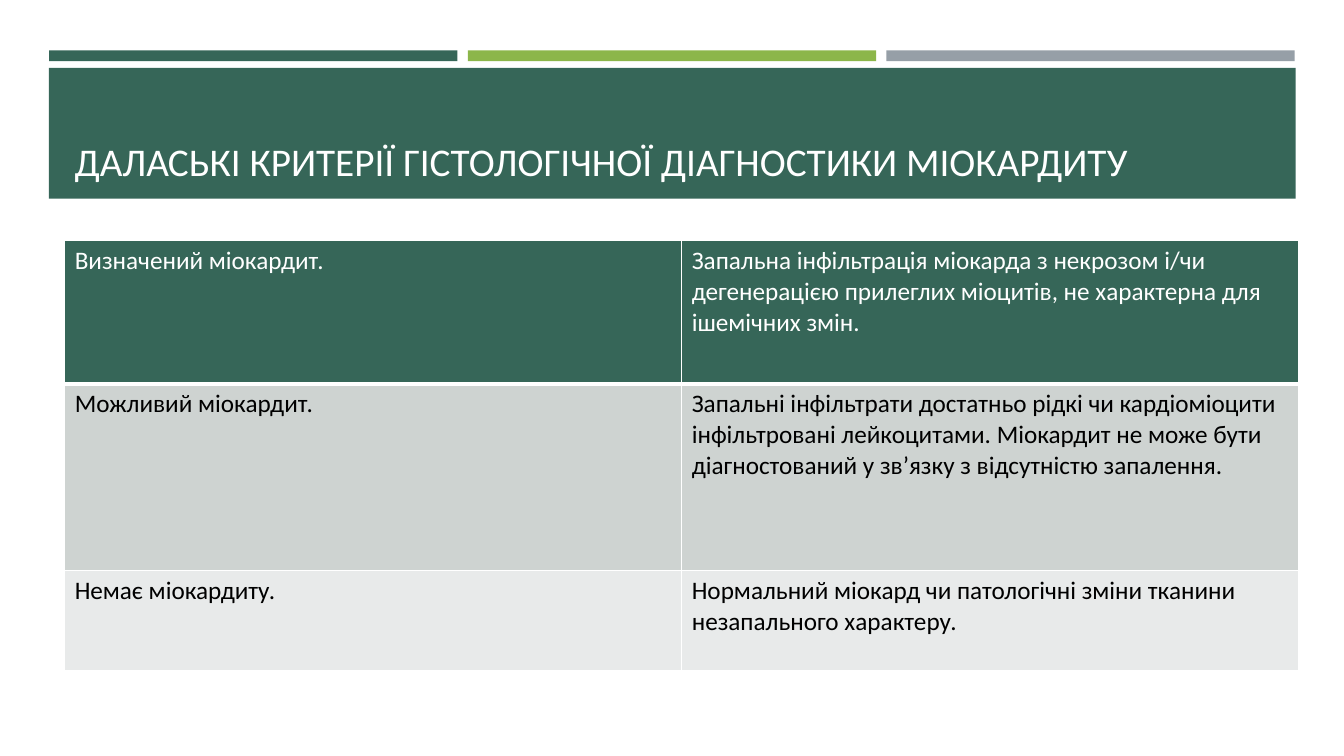
from lxml import etree
from pptx import Presentation
from pptx import util as u
from pptx.dml.color import RGBColor
from pptx.enum import shapes, text
from pptx.oxml.ns import qn

Cm, Pt = u.Cm, u.Pt

GREEN = RGBColor(0x36, 0x66, 0x58)
LIME = RGBColor(0x8C, 0xB6, 0x4A)
GREY = RGBColor(0x96, 0x9F, 0xA7)
BAND_DARK = RGBColor(0xCE, 0xD3, 0xD1)
BAND_LIGHT = RGBColor(0xE8, 0xEA, 0xEA)
WHITE = RGBColor(0xFF, 0xFF, 0xFF)
BLACK = RGBColor(0x00, 0x00, 0x00)
FONT = "Calibri"

TITLE = "ДАЛАСЬКІ КРИТЕРІЇ ГІСТОЛОГІЧНОЇ ДІАГНОСТИКИ МІОКАРДИТУ"
STRIPES = [GREEN, LIME, GREY]
# diagnosis, histology, row height in cm, fill, text colour
CRITERIA = [
    ("Визначений міокардит.",
     "Запальна інфільтрація міокарда з некрозом і/чи дегенерацією прилеглих "
     "міоцитів, не характерна для ішемічних змін.",
     3.6, GREEN, WHITE),
    ("Можливий міокардит.",
     "Запальні інфільтрати достатньо рідкі чи кардіоміоцити інфільтровані "
     "лейкоцитами. Міокардит не може бути діагностований у зв’язку "
     "з відсутністю запалення.",
     4.7, BAND_DARK, BLACK),
    ("Немає міокардиту.",
     "Нормальний міокард чи патологічні зміни тканини незапального характеру.",
     2.52, BAND_LIGHT, BLACK),
]
COLUMN_WIDTH = 15.55
STRIPE_WIDTH, STRIPE_STEP = 10.29, 10.64


def add_block(page, left, top, width, height, color):
    block = page.shapes.add_shape(shapes.MSO_SHAPE.RECTANGLE,
                                  Cm(left), Cm(top), Cm(width), Cm(height))
    block.shadow.inherit = False
    block.fill.solid()
    block.fill.fore_color.rgb = color
    block.line.fill.background()


def write(frame, words, size, color):
    frame.text = words
    font = frame.paragraphs[0].runs[0].font
    font.name, font.size, font.color.rgb = FONT, Pt(size), color


def set_borders(cell, top, bottom):
    """White cell borders, 1 pt at the sides; must run before the fill is set."""
    properties = cell._tc.get_or_add_tcPr()
    for side, width in (("L", 1), ("R", 1), ("T", top), ("B", bottom)):
        line = etree.SubElement(properties, qn(f"a:ln{side}"), w=str(Pt(width)))
        fill = etree.SubElement(line, qn("a:solidFill"))
        etree.SubElement(fill, qn("a:srgbClr"), val=str(WHITE))


def add_title(page):
    add_block(page, 1.23, 1.71, 31.42, 3.3, GREEN)
    box = page.shapes.add_textbox(Cm(1.63), Cm(1.96), Cm(30.63), Cm(2.82))
    frame = box.text_frame
    frame.word_wrap = True
    frame.vertical_anchor = text.MSO_ANCHOR.BOTTOM
    write(frame, TITLE, 28, WHITE)


def add_criteria(page):
    total = sum(row[2] for row in CRITERIA)
    table = page.shapes.add_table(len(CRITERIA), 2, Cm(1.63), Cm(6.07),
                                  Cm(2 * COLUMN_WIDTH), Cm(total)).table
    for column in table.columns:
        column.width = Cm(COLUMN_WIDTH)
    for i, (diagnosis, histology, height, fill, color) in enumerate(CRITERIA):
        table.rows[i].height = Cm(height)
        for j, words in enumerate((diagnosis, histology)):
            cell = table.cell(i, j)
            set_borders(cell, top=3 if i == 1 else 1, bottom=3 if i == 0 else 1)
            cell.fill.solid()
            cell.fill.fore_color.rgb = fill
            write(cell.text_frame, words, 18, color)


def main():
    deck = Presentation()
    deck.slide_width, deck.slide_height = Cm(33.87), Cm(19.05)
    page = deck.slides.add_slide(deck.slide_layouts[6])
    for i, color in enumerate(STRIPES):
        add_block(page, 1.24 + i * STRIPE_STEP - i * 0.09, 1.27,
                  STRIPE_WIDTH, 0.27, color)
    add_title(page)
    add_criteria(page)
    deck.save("out.pptx")


if __name__ == "__main__":
    main()
